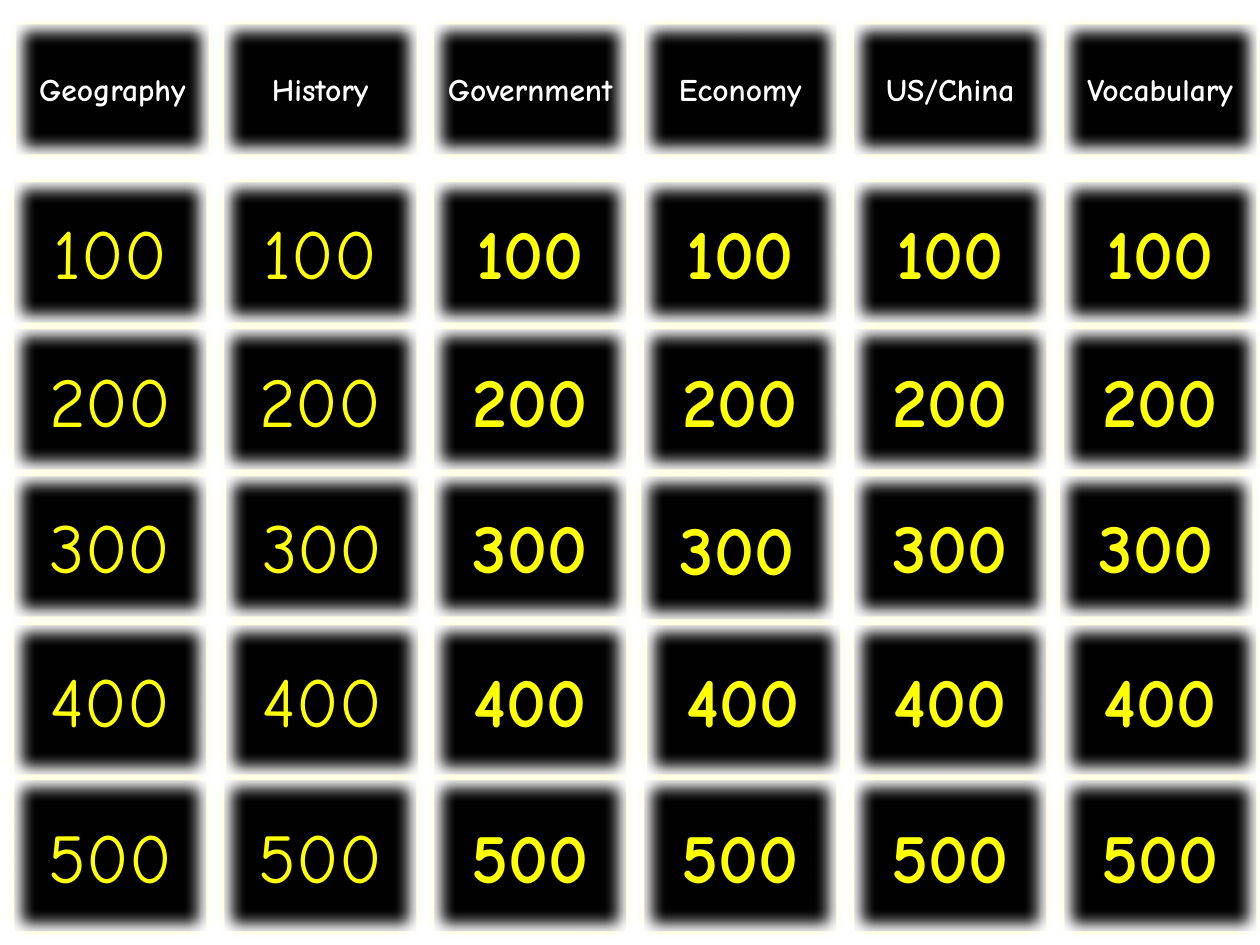
from lxml.etree import SubElement
from pptx import Presentation
from pptx.dml.color import RGBColor
from pptx.enum.shapes import MSO_SHAPE
from pptx.enum.text import MSO_ANCHOR, PP_ALIGN
from pptx.oxml.ns import qn
from pptx.util import Pt

BLACK = RGBColor(0x00, 0x00, 0x00)
WHITE = RGBColor(0xFF, 0xFF, 0xFF)
YELLOW = RGBColor(0xFF, 0xFF, 0x00)
FONT = "Comic Neue"

# Grid, in points
LEFT, COLUMN_STEP, TILE_WIDTH = 6, 120, 114
HEADER_TOP, HEADER_HEIGHT = 12, 78
CATEGORIES = ["Geography", "History", "Government", "Economy", "US/China", "Vocabulary"]
# Score: (top, height)
SCORE_ROWS = {
    100: (102, 84),
    200: (186, 84),
    300: (270, 84),
    400: (355, 89.5),
    500: (444, 90),
}
# Tiles that sit slightly off the grid: (score, column): shift to the right
SHIFTS = {(300, 1): 1.2, (300, 3): -1.8, (300, 5): -2.4, (400, 1): 1.2, (400, 3): 1.8}
REGULAR_COLUMNS = 2  # the first columns have scores in regular weight

HEADER_FORMAT = {"name": FONT, "size": Pt(18), "bold": True}
SCORE_FORMAT = {"name": FONT, "size": Pt(40)}


def soften_edges(shape, radius):
    """Replace the shadow with a soft edge."""
    shape.shadow.inherit = False
    effects = shape._element.spPr.find(qn("a:effectLst"))
    SubElement(effects, qn("a:softEdge"), rad=str(radius))


def add_tile(page, text, left, top, height, color, font_format):
    """Add one black button with centred text."""
    tile = page.shapes.add_shape(
        MSO_SHAPE.ACTION_BUTTON_CUSTOM, Pt(left), Pt(top), Pt(TILE_WIDTH), Pt(height)
    )
    tile.fill.solid()
    tile.fill.fore_color.rgb = BLACK
    tile.line.color.rgb = YELLOW
    tile.line.width = Pt(4.5)
    soften_edges(tile, Pt(8.86))

    frame = tile.text_frame
    frame.word_wrap = False
    frame.vertical_anchor = MSO_ANCHOR.MIDDLE
    para = frame.paragraphs[0]
    para.alignment = PP_ALIGN.CENTER
    span = para.add_run()
    span.text = text
    span.font.color.rgb = color
    for name, value in font_format.items():
        setattr(span.font, name, value)


def add_headers(page):
    for column, category in enumerate(CATEGORIES):
        # The headers start slightly to the right of the first column
        left = LEFT + column * COLUMN_STEP + (1.2 if column == 0 else 0)
        add_tile(page, category, left, HEADER_TOP, HEADER_HEIGHT, WHITE, HEADER_FORMAT)


def add_scores(page):
    for score, (top, height) in SCORE_ROWS.items():
        for column in range(len(CATEGORIES)):
            left = LEFT + column * COLUMN_STEP + SHIFTS.get((score, column), 0)
            # One tile is a little taller than its row
            extra = 1.7 if (score, column) == (300, 3) else 0
            font_format = {**SCORE_FORMAT, "bold": column >= REGULAR_COLUMNS}
            add_tile(page, str(score), left, top, height + extra, YELLOW, font_format)


def main():
    deck = Presentation()
    deck.slide_width, deck.slide_height = Pt(720), Pt(540)
    page = deck.slides.add_slide(deck.slide_layouts[6])
    page.background.fill.solid()
    page.background.fill.fore_color.rgb = WHITE

    add_headers(page)
    add_scores(page)
    deck.save("out.pptx")


if __name__ == "__main__":
    main()
